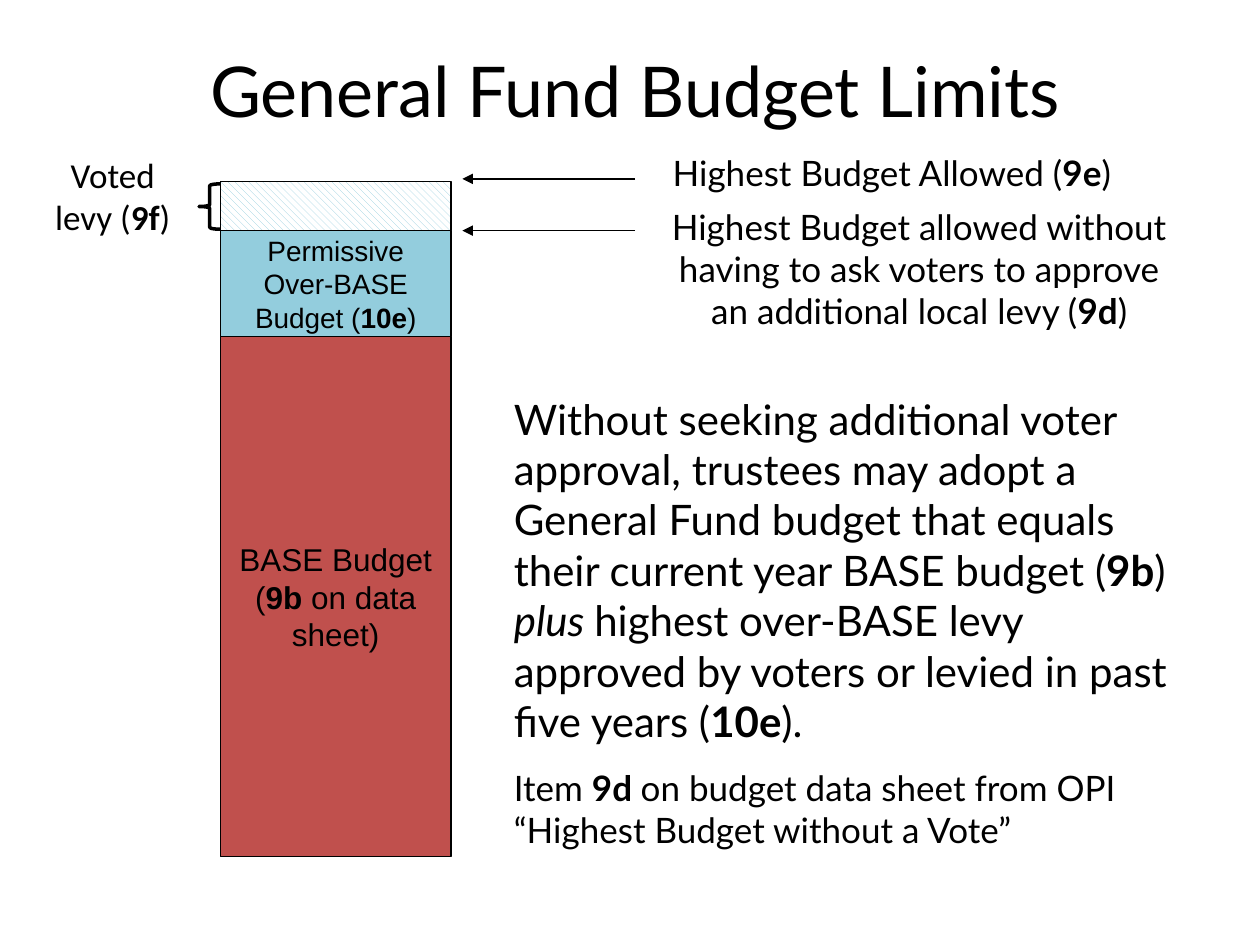
from lxml.etree import SubElement
from pptx import Presentation
from pptx.dml.color import RGBColor
from pptx.enum.dml import MSO_PATTERN
from pptx.enum.shapes import MSO_CONNECTOR, MSO_SHAPE
from pptx.enum.text import MSO_ANCHOR, PP_ALIGN
from pptx.oxml.ns import qn
from pptx.util import Inches, Pt

BLACK = RGBColor(0x00, 0x00, 0x00)
WHITE = RGBColor(0xFF, 0xFF, 0xFF)
RED = RGBColor(0xC0, 0x50, 0x4D)
BLUE = RGBColor(0x93, 0xCD, 0xDD)

# The stacked bar: one column, with the levels that divide it
BAR_LEFT, BAR_WIDTH = 1.75, 1.83
VOTED_TOP, PERMISSIVE_TOP, BASE_TOP, BAR_BOTTOM = 1.44, 1.83, 2.67, 6.8


def inches(*lengths):
    return [Inches(length) for length in lengths]


def write(para, text, size, font="Lato", align=PP_ALIGN.LEFT):
    """Fill a paragraph; *stars* mark bold and _underscores_ mark italic."""
    para.alignment = align
    para.font.size = Pt(size)
    para.font.name = font
    para.font.color.rgb = BLACK
    for bold_index, part in enumerate(text.split("*")):
        for italic_index, piece in enumerate(part.split("_")):
            if piece:
                span = para.add_run()
                span.text = piece
                if bold_index % 2:
                    span.font.bold = True
                if italic_index % 2:
                    span.font.italic = True


def add_text(page, place, text, size, font="Lato", align=PP_ALIGN.CENTER):
    box = page.shapes.add_textbox(*inches(*place))
    box.text_frame.word_wrap = True
    write(box.text_frame.paragraphs[0], text, size, font, align)
    return box.text_frame


def add_outlined(page, kind, place, line_width=0.75):
    shape = page.shapes.add_shape(kind, *inches(*place))
    shape.shadow.inherit = False
    shape.fill.background()
    shape.line.color.rgb = BLACK
    shape.line.width = Pt(line_width)
    return shape


def add_segment(page, top, bottom, color, text="", size=16):
    place = (BAR_LEFT, top, BAR_WIDTH, bottom - top)
    segment = add_outlined(page, MSO_SHAPE.RECTANGLE, place)
    segment.fill.solid()
    segment.fill.fore_color.rgb = color
    if text:
        frame = segment.text_frame
        frame.word_wrap = True
        frame.vertical_anchor = MSO_ANCHOR.MIDDLE
        write(frame.paragraphs[0], text, size, "Arial", PP_ALIGN.CENTER)
    return segment


def add_arrow(page, level):
    arrow = page.shapes.add_connector(
        MSO_CONNECTOR.STRAIGHT, *inches(5.04, level, 3.67, level))
    arrow.line.color.rgb = BLACK
    arrow.line.width = Pt(0.75)
    SubElement(arrow.line._get_or_add_ln(), qn("a:tailEnd"), type="triangle")
    SubElement(arrow._element.spPr, qn("a:effectLst"))


def add_title(page, text):
    title = page.shapes.title
    title.left, title.top, title.width, title.height = inches(0.25, 0.33, 9.58, 0.77)
    title.text_frame.word_wrap = True
    title.text_frame.vertical_anchor = MSO_ANCHOR.TOP
    write(title.text_frame.paragraphs[0], text, 40, align=PP_ALIGN.CENTER)


def add_bar(page):
    add_segment(page, BASE_TOP, BAR_BOTTOM, RED,
                "BASE Budget (*9b* on data sheet)", 18)
    voted = add_segment(page, VOTED_TOP, PERMISSIVE_TOP, WHITE)
    voted.fill.patterned()
    voted.fill.pattern = MSO_PATTERN.WIDE_DOWNWARD_DIAGONAL
    voted.fill.fore_color.rgb = BLUE
    voted.fill.back_color.rgb = WHITE
    add_segment(page, PERMISSIVE_TOP, BASE_TOP, BLUE,
                "Permissive Over-BASE Budget (*10e*)")


def add_limits(page):
    add_outlined(page, MSO_SHAPE.LEFT_BRACE, (1.58, 1.46, 0.17, 0.36), 2)
    add_text(page, (0.33, 1.17, 1.13, 0.77), "Voted levy (*9f*)", 20, "Calibri")
    for level in (1.42, PERMISSIVE_TOP):
        add_arrow(page, level)
    add_text(page, (5.24, 1.15, 3.96, 0.44), "Highest Budget Allowed (*9e*)",
             20, align=PP_ALIGN.LEFT)
    add_text(page, (5.17, 1.58, 4.25, 1.11),
             "Highest Budget allowed without having to ask voters to approve "
             "an additional local levy (*9d*)", 20)


def add_explanation(page):
    frame = add_text(
        page, (3.98, 3.07, 5.43, 3.92),
        "Without seeking additional voter approval, trustees may adopt a "
        "General Fund budget that equals their current year BASE budget "
        "(*9b*) _plus _highest over-BASE levy approved by voters or levied "
        "in past five years (*10e*).", 24, align=PP_ALIGN.LEFT)
    source = frame.add_paragraph()
    source.space_before = Pt(12)
    write(source, "Item *9d *on budget data sheet from OPI", 20)
    write(frame.add_paragraph(), "“Highest Budget without a Vote”", 20)


def main():
    deck = Presentation()
    deck.slide_width, deck.slide_height = inches(10, 7.5)
    page = deck.slides.add_slide(deck.slide_layouts[5])
    add_title(page, "General Fund Budget Limits")
    add_bar(page)
    add_limits(page)
    add_explanation(page)
    deck.save("out.pptx")


if __name__ == "__main__":
    main()
